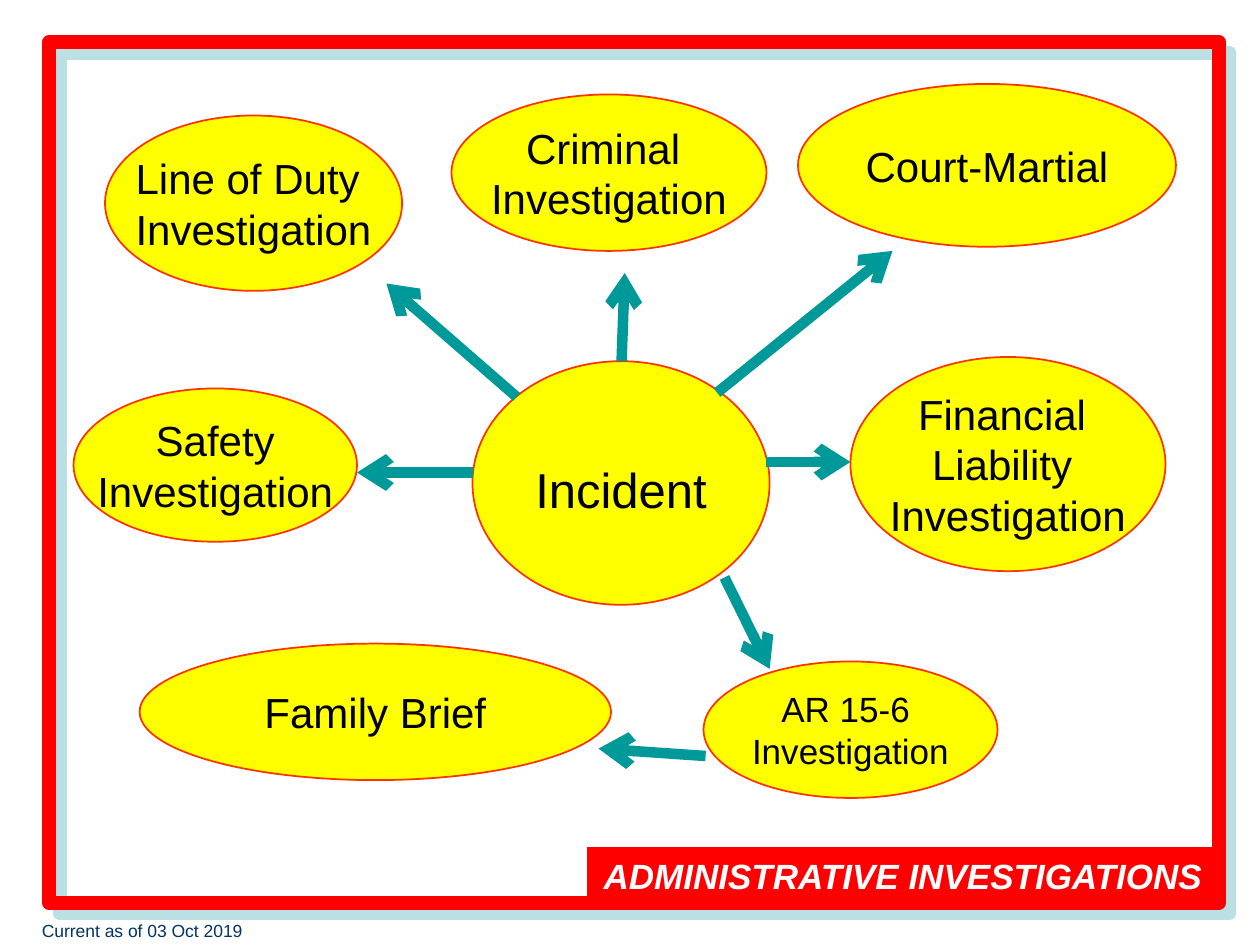
from dataclasses import dataclass

from lxml.etree import SubElement
from pptx import Presentation
from pptx.dml.color import RGBColor as Color
from pptx.enum.shapes import MSO_CONNECTOR as Connector, MSO_SHAPE as Shape
from pptx.enum.text import MSO_ANCHOR as Anchor, PP_ALIGN as Align
from pptx.oxml.ns import qn
from pptx.util import Inches, Pt


@dataclass(frozen=True)
class Theme:
    font: str = "Arial"
    red: Color = Color(0xFF, 0x00, 0x00)
    shadow: str = "BBE0E3"
    yellow: Color = Color(0xFF, 0xFF, 0x00)
    outline: Color = Color(0xFF, 0x33, 0x00)
    teal: Color = Color(0x00, 0x99, 0x99)
    white: Color = Color(0xFF, 0xFF, 0xFF)
    black: Color = Color(0x00, 0x00, 0x00)
    navy: Color = Color(0x00, 0x33, 0x66)
    hub_size: int = 28
    node_size: int = 24
    small_size: int = 20
    date_size: int = 10


theme = Theme()
deck = Presentation()
deck.slide_width, deck.slide_height = Inches(10), Inches(7.5)
page = deck.slides.add_slide(deck.slide_layouts[6])
shapes = page.shapes


def cells(*counts):
    """Lengths on a grid of 120 columns by 90 rows, with square cells."""
    return [round(count * deck.slide_width / 120) for count in counts]


def write(box, lines, size, color, align=Align.CENTER):
    frame = box.text_frame
    frame.word_wrap = False
    frame.vertical_anchor = Anchor.MIDDLE
    for index, line in enumerate(lines):
        para = frame.paragraphs[0] if index == 0 else frame.add_paragraph()
        para.text = line
        para.alignment = align
        para.font.name = theme.font
        para.font.size = Pt(size)
        para.font.color.rgb = color
    return frame


# Page border with an offset shadow
border = shapes.add_shape(Shape.RECTANGLE, *cells(4.7, 4, 111.4, 82))
border.fill.background()
border.line.color.rgb = theme.red
border.line.width = Pt(8)
border.shadow.inherit = False
effects = border.element.spPr.find(qn("a:effectLst"))
shade = SubElement(effects, qn("a:outerShdw"), dist=str(Pt(8.5)),
                   dir=str(45 * 60000), algn="ctr", rotWithShape="0")
SubElement(shade, qn("a:srgbClr"), val=theme.shadow)

# Title banner
banner = shapes.add_shape(Shape.RECTANGLE, *cells(56, 80.7, 60, 5.3))
banner.shadow.inherit = False
banner.fill.solid()
banner.fill.fore_color.rgb = theme.red
banner.line.color.rgb = theme.red
banner.line.width = Pt(0.75)
title = write(banner, ["ADMINISTRATIVE INVESTIGATIONS"], theme.small_size, theme.white)
title.paragraphs[0].font.bold = True
title.paragraphs[0].font.italic = True

# Date line
date = shapes.add_textbox(*cells(2.8, 87, 26.2, 3.2))
write(date, ["Current as of 03 Oct 2019"], theme.date_size, theme.navy, Align.LEFT)

# Incident and the inquiries around it: left, top, width, height, lines, size
nodes = [
    (45, 34.4, 28.3, 23.2, ["Incident"], theme.hub_size),
    (7, 37, 27, 14.6, ["Safety", "Investigation"], theme.node_size),
    (10, 11, 28.3, 16.7, ["Line of Duty ", "Investigation"], theme.node_size),
    (43, 9, 30, 14.9, ["Criminal ", "Investigation"], theme.node_size),
    (76, 8, 36, 15.5, ["Court-Martial"], theme.node_size),
    (67, 63, 28, 13, ["AR 15-6 ", "Investigation"], theme.small_size),
    (81, 34, 30, 20.4, ["Financial ", "Liability ", "Investigation"], theme.node_size),
    (13.3, 61.3, 44.9, 13, ["Family Brief"], theme.node_size),
]
for *place, lines, size in nodes:
    node = shapes.add_shape(Shape.OVAL, *cells(*place))
    node.shadow.inherit = False
    node.fill.solid()
    node.fill.fore_color.rgb = theme.yellow
    node.line.color.rgb = theme.outline
    node.line.width = Pt(1)
    label = write(node, lines, size, theme.black)
    if size == theme.hub_size:
        label.margin_top = Inches(0.15)  # the hub label sits just below centre

# Arrows: start column and row, end column and row
arrows = [
    (67.2, 72, 57, 71.3),      # AR 15-6 to family brief
    (45, 45, 34, 45),          # incident to safety
    (49.2, 37.8, 36.8, 27),    # incident to line of duty
    (59.2, 34.4, 59.5, 26),    # incident to criminal
    (69, 55, 73.3, 63.7),      # incident to AR 15-6
    (73, 44, 81, 44),          # incident to financial liability
    (68.3, 37.4, 85, 23.9),    # incident to court-martial
]
for ends in arrows:
    arrow = shapes.add_connector(Connector.STRAIGHT, *cells(*ends))
    arrow.line.color.rgb = theme.teal
    arrow.line.width = Pt(6)
    SubElement(arrow.line._get_or_add_ln(), qn("a:tailEnd"), type="arrow")
    SubElement(arrow.element.spPr, qn("a:effectLst"))

deck.save("out.pptx")
